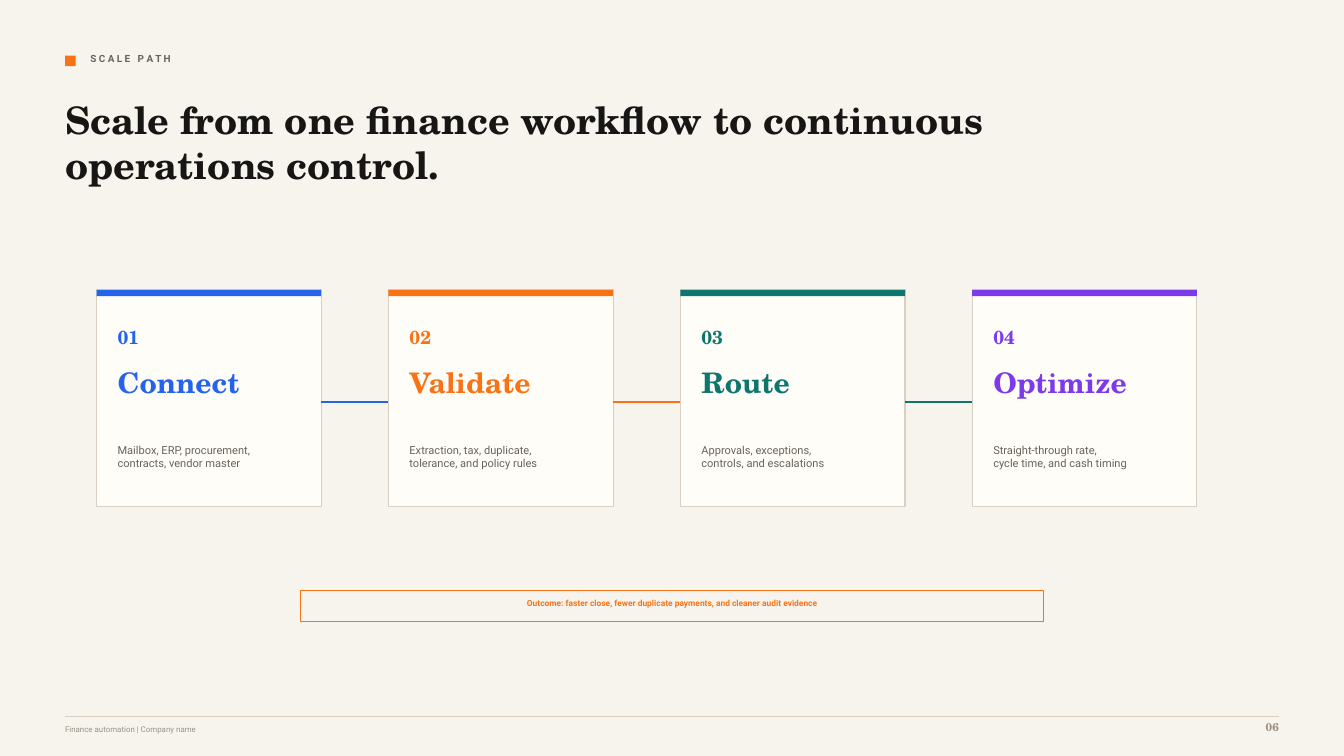
import pptx
import pptx.dml.color
import pptx.enum.shapes
import pptx.enum.text
import pptx.oxml
import pptx.util

RGBColor = pptx.dml.color.RGBColor
ALIGN = pptx.enum.text.PP_ALIGN

CREAM = RGBColor(0xF7, 0xF4, 0xEE)
PAPER = RGBColor(0xFF, 0xFD, 0xF8)
BORDER = RGBColor(0xD9, 0xD0, 0xC3)
INK = RGBColor(0x17, 0x16, 0x14)
MUTED = RGBColor(0x69, 0x63, 0x5A)
FAINT = RGBColor(0x9A, 0x91, 0x84)
BLUE = RGBColor(0x25, 0x63, 0xEB)
ORANGE = RGBColor(0xF9, 0x73, 0x16)
TEAL = RGBColor(0x0F, 0x76, 0x6E)
VIOLET = RGBColor(0x7C, 0x3A, 0xED)

SERIF = "TeX Gyre Schola"
SANS = "Roboto"

STAGES = [
    ("Connect", "Mailbox, ERP, procurement,\ncontracts, vendor master", BLUE),
    ("Validate", "Extraction, tax, duplicate,\ntolerance, and policy rules", ORANGE),
    ("Route", "Approvals, exceptions,\ncontrols, and escalations", TEAL),
    ("Optimize", "Straight-through rate,\ncycle time, and cash timing", VIOLET),
]


def px(length):
    return pptx.util.Emu(length * 9525)


class SlideBuilder:
    """Holds the current slide and draws each kind of element in one style."""

    def __init__(self, presentation):
        self.slide = presentation.slides.add_slide(presentation.slide_layouts[5])
        fill = self.slide.background.fill
        fill.solid()
        fill.fore_color.rgb = CREAM

    def rectangle(self, left, top, width, height, fill=None, line=None):
        shape = self.slide.shapes.add_shape(
            pptx.enum.shapes.MSO_SHAPE.RECTANGLE,
            px(left), px(top), px(width), px(height))
        shape.shadow.inherit = False
        if fill is None:
            shape.fill.background()
        else:
            shape.fill.solid()
            shape.fill.fore_color.rgb = fill
        if line is None:
            shape.line.fill.background()
        else:
            shape.line.color.rgb = line
            shape.line.width = pptx.util.Pt(0.75)

    def horizontal_line(self, left, y, width, color, weight):
        connector = self.slide.shapes.add_connector(
            pptx.enum.shapes.MSO_CONNECTOR.STRAIGHT,
            px(left), px(y), px(left + width), px(y))
        connector.line.color.rgb = color
        connector.line.width = pptx.util.Pt(weight)
        connector._element.spPr.append(pptx.oxml.parse_xml(
            '<a:effectLst xmlns:a="http://schemas.openxmlformats.org/drawingml/2006/main"/>'))

    def text(self, left, top, width, height, text, size, color,
             font=SANS, bold=False, align=ALIGN.LEFT):
        box = self.slide.shapes.add_textbox(px(left), px(top), px(width), px(height))
        self.format_text(box, text, size, color, font, bold, align)

    def title(self, left, top, width, height, text, size, color):
        title = self.slide.shapes.title
        title.left, title.top = px(left), px(top)
        title.width, title.height = px(width), px(height)
        self.format_text(title, text, size, color, SERIF, True, ALIGN.LEFT)

    def format_text(self, shape, text, size, color, font, bold, align):
        frame = shape.text_frame
        frame.text = text
        frame.word_wrap = True
        frame.auto_size = pptx.enum.text.MSO_AUTO_SIZE.NONE
        frame.vertical_anchor = pptx.enum.text.MSO_ANCHOR.TOP
        frame.margin_left = frame.margin_right = 0
        frame.margin_top = frame.margin_bottom = 0
        for paragraph in frame.paragraphs:
            paragraph.alignment = align
            for run in paragraph.runs:
                run.font.name = font
                run.font.size = pptx.util.Pt(size)
                run.font.bold = bold
                run.font.color.rgb = color

    def stage_card(self, left, top, width, height, number, name, detail, color):
        self.rectangle(left, top, width, height, PAPER, BORDER)
        self.rectangle(left, top, width, 6, color)
        inner = left + 20
        self.text(inner, top + 34, 44, 24, f"{number:02}", 13.5, color, SERIF, True)
        self.text(inner, top + 72, 160, 44, name, 20.2, color, SERIF, True)
        self.text(inner, top + 146, 166, 44, detail, 7.9, MUTED)


def main():
    presentation = pptx.Presentation()
    presentation.slide_width, presentation.slide_height = px(1280), px(720)
    builder = SlideBuilder(presentation)
    margin, content_width = 62, 1156

    # Header
    builder.rectangle(margin, 53, 10, 10, ORANGE)
    builder.text(86, 50, 560, 18, "S C A L E   P A T H", 7.1, MUTED, bold=True)
    builder.title(margin, 92, 950, 98,
                  "Scale from one finance workflow to continuous operations control.",
                  27, INK)

    # Stage cards, each joined to the next
    card_left, card_top, card_width, card_height, gap = 92, 276, 214, 206, 64
    for index, (name, detail, color) in enumerate(STAGES):
        left = card_left + index * (card_width + gap)
        builder.stage_card(left, card_top, card_width, card_height,
                           index + 1, name, detail, color)
        if index < len(STAGES) - 1:
            builder.horizontal_line(left + card_width, 383, gap, color, 1.5)

    # Outcome
    builder.rectangle(286, 562, 708, 30, line=ORANGE)
    builder.text(298, 570, 684, 14,
                 "Outcome: faster close, fewer duplicate payments, and cleaner audit evidence",
                 6, ORANGE, bold=True, align=ALIGN.CENTER)

    # Footer
    builder.horizontal_line(margin, 682, content_width, BORDER, 0.75)
    builder.text(margin, 690, 760, 14, "Finance automation | Company name", 5.6, FAINT)
    builder.text(1170, 686, 48, 18, "06", 8.2, FAINT, SERIF, True, ALIGN.RIGHT)

    presentation.save("out.pptx")


if __name__ == "__main__":
    main()
